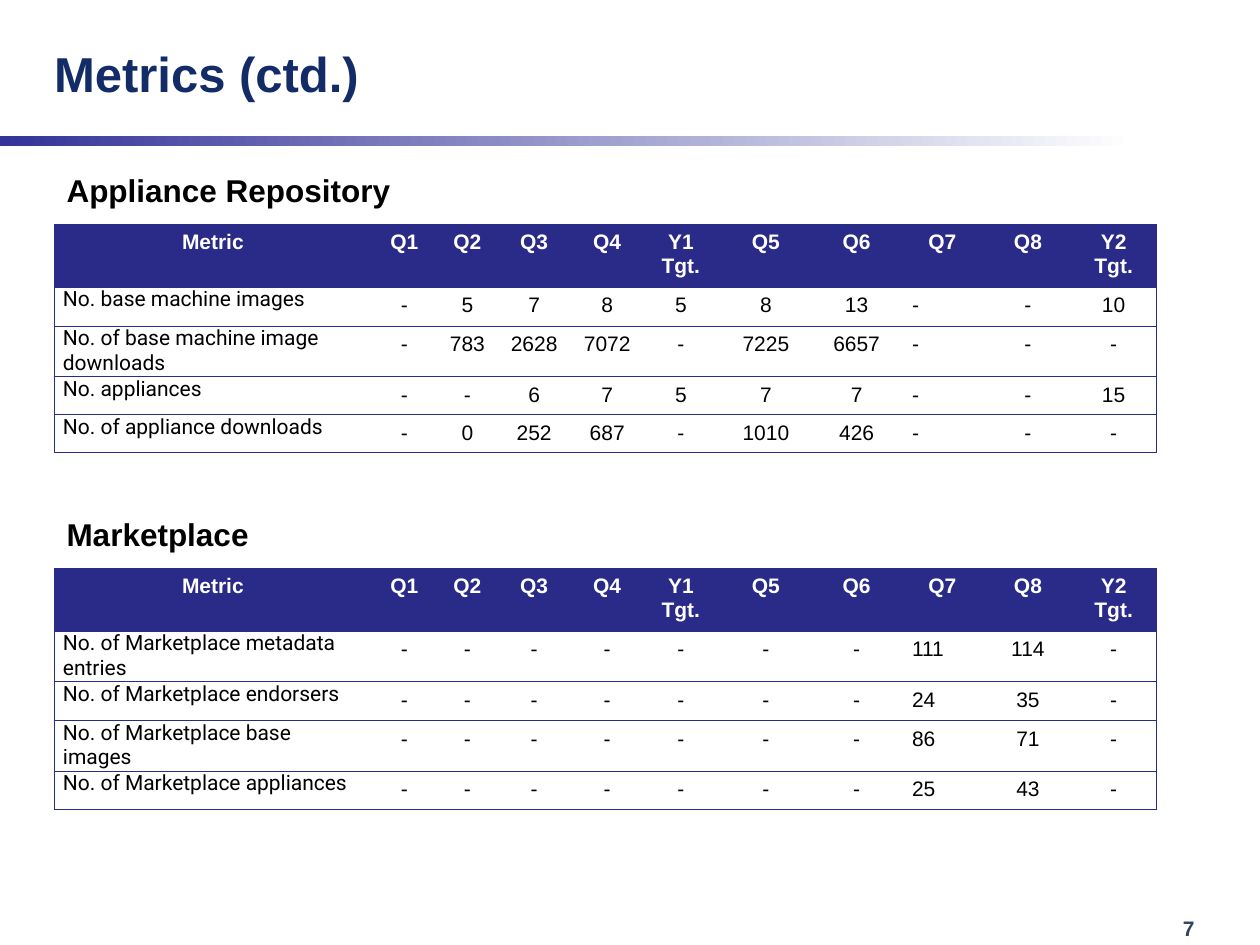
from lxml.etree import SubElement
from pptx import Presentation
from pptx.dml.color import RGBColor
from pptx.enum.shapes import MSO_SHAPE as Shape
from pptx.enum.text import MSO_ANCHOR as Anchor, MSO_AUTO_SIZE as AutoSize, PP_ALIGN as Align
from pptx.oxml.ns import qn
from pptx.util import Inches, Pt

GRID_COLUMNS, GRID_ROWS = 100, 75
SLIDE_WIDTH, SLIDE_HEIGHT = Inches(10), Inches(7.5)

NAVY, TITLE_BLUE, BAND_BLUE = "2A2A89", "132B66", "333399"
SLATE, WHITE, BLACK = "32425D", "FFFFFF", "000000"

COLUMN_SPANS = [25.2, 5.2, 4.8, 5.8, 5.8, 5.9, 7.6] + [6.8] * 4
ROW_SPANS = [4.1, 3.1, 3.1, 3, 2.4]
HEADERS = ["Metric", "Q1", "Q2", "Q3", "Q4", "Y1 Tgt.", "Q5", "Q6", "Q7", "Q8", "Y2\nTgt."]
LEFT_ALIGNED = (0, HEADERS.index("Q7"))

APPLIANCE_ROWS = [
    ["No. base machine images", "-", "5", "7", "8", "5", "8", "13", "-", "-", "10"],
    ["No. of base machine image downloads", "-", "783", "2628", "7072", "-", "7225", "6657", "-", "-", "-"],
    ["No. appliances", "-", "-", "6", "7", "5", "7", "7", "-", "-", "15"],
    ["No. of appliance downloads", "-", "0", "252", "687", "-", "1010", "426", "-", "-", "-"],
]
MARKETPLACE_ROWS = [
    [name] + ["-"] * 7 + [q7, q8, "-"]
    for name, q7, q8 in [
        ("No. of Marketplace metadata entries", "111", "114"),
        ("No. of Marketplace endorsers", "24", "35"),
        ("No. of Marketplace base images", "86", "71"),
        ("No. of Marketplace appliances", "25", "43"),
    ]
]


def color(hex_value):
    return RGBColor.from_string(hex_value)


def across(columns):
    return round(SLIDE_WIDTH * columns / GRID_COLUMNS)


def down(rows):
    return round(SLIDE_HEIGHT * rows / GRID_ROWS)


def place(box):
    left, top, width, height = box
    return across(left), down(top), across(width), down(height)


def write(frame, text, size=12, font="Arial", fill=BLACK, bold=False, align=Align.LEFT):
    frame.text = text
    for paragraph in frame.paragraphs:
        paragraph.alignment = align
        paragraph.font.size = Pt(size)
        paragraph.font.name = font
        paragraph.font.bold = bold
        paragraph.font.color.rgb = color(fill)


def add_label(slide, box, text, **style):
    frame = slide.shapes.add_textbox(*place(box)).text_frame
    frame.word_wrap = False
    frame.auto_size = AutoSize.SHAPE_TO_FIT_TEXT
    write(frame, text, bold=True, **style)


def add_title(slide, box, text):
    title = slide.shapes.title
    title.left, title.top, title.width, title.height = place(box)
    frame = title.text_frame
    frame.vertical_anchor = Anchor.MIDDLE
    frame.auto_size = AutoSize.NONE
    write(frame, text, size=28, fill=TITLE_BLUE, bold=True)


def add_band(slide, box):
    band = slide.shapes.add_shape(Shape.RECTANGLE, *place(box))
    band.shadow.inherit = False
    band.line.fill.background()
    band.fill.gradient()
    band.fill.gradient_angle = 0
    stops = band.fill.gradient_stops
    for stop, position, shade in zip(stops, (0, 0.9), (BAND_BLUE, WHITE)):
        stop.position = position
        stop.color.rgb = color(shade)


def set_borders(cell, sides):
    properties = cell._tc.get_or_add_tcPr()
    for side in "LRTB":
        line = SubElement(properties, qn(f"a:ln{side}"), w=str(Pt(0.75)))
        if side in sides:
            solid = SubElement(line, qn("a:solidFill"))
            SubElement(solid, qn("a:srgbClr"), val=NAVY)
        else:
            SubElement(line, qn("a:noFill"))


def format_cell(cell, text, row, column):
    sides = "TB"
    if column == 0:
        sides += "L"
    if column == len(HEADERS) - 1:
        sides += "R"
    set_borders(cell, sides)
    if row == 0:
        cell.fill.solid()
        cell.fill.fore_color.rgb = color(NAVY)
        write(cell.text_frame, text, fill=WHITE, bold=True, align=Align.CENTER)
        return
    cell.fill.background()
    if column == 0:
        cell.margin_left, cell.margin_right = Inches(0.07), Inches(0.08)
        cell.margin_top = cell.margin_bottom = 0
    write(
        cell.text_frame,
        text,
        font="Roboto" if column == 0 else "Arial",
        align=Align.LEFT if column in LEFT_ALIGNED else Align.CENTER,
    )


def add_metrics(slide, box, heading, rows):
    left, top, width, height = box
    add_label(slide, (left, top - 4.7, width, 4), heading, size=18)
    records = [HEADERS] + rows
    graphic = slide.shapes.add_table(len(records), len(HEADERS), *place(box))
    table = graphic.table
    table.first_row = True
    table.horz_banding = False
    for column, span in zip(table.columns, COLUMN_SPANS):
        column.width = across(span)
    for row, span in zip(table.rows, ROW_SPANS):
        row.height = down(span)
    graphic.height = down(height)
    for row, record in enumerate(records):
        for column, text in enumerate(record):
            format_cell(table.cell(row, column), text, row, column)


def main():
    presentation = Presentation()
    presentation.slide_width, presentation.slide_height = SLIDE_WIDTH, SLIDE_HEIGHT
    slide = presentation.slides.add_slide(presentation.slide_layouts[5])
    add_band(slide, (0, 10.8, 100, 0.8))
    add_title(slide, (3.3, 0.8, 70.8, 10), "Metrics (ctd.)")
    width = sum(COLUMN_SPANS)
    add_metrics(slide, (4.3, 17.8, width, 18.1), "Appliance Repository", APPLIANCE_ROWS)
    add_metrics(slide, (4.3, 45.1, width, 19.1), "Marketplace", MARKETPLACE_ROWS)
    add_label(slide, (92.9, 72.2, 6.4, 3), "7", fill=SLATE)
    presentation.save("out.pptx")


if __name__ == "__main__":
    main()
